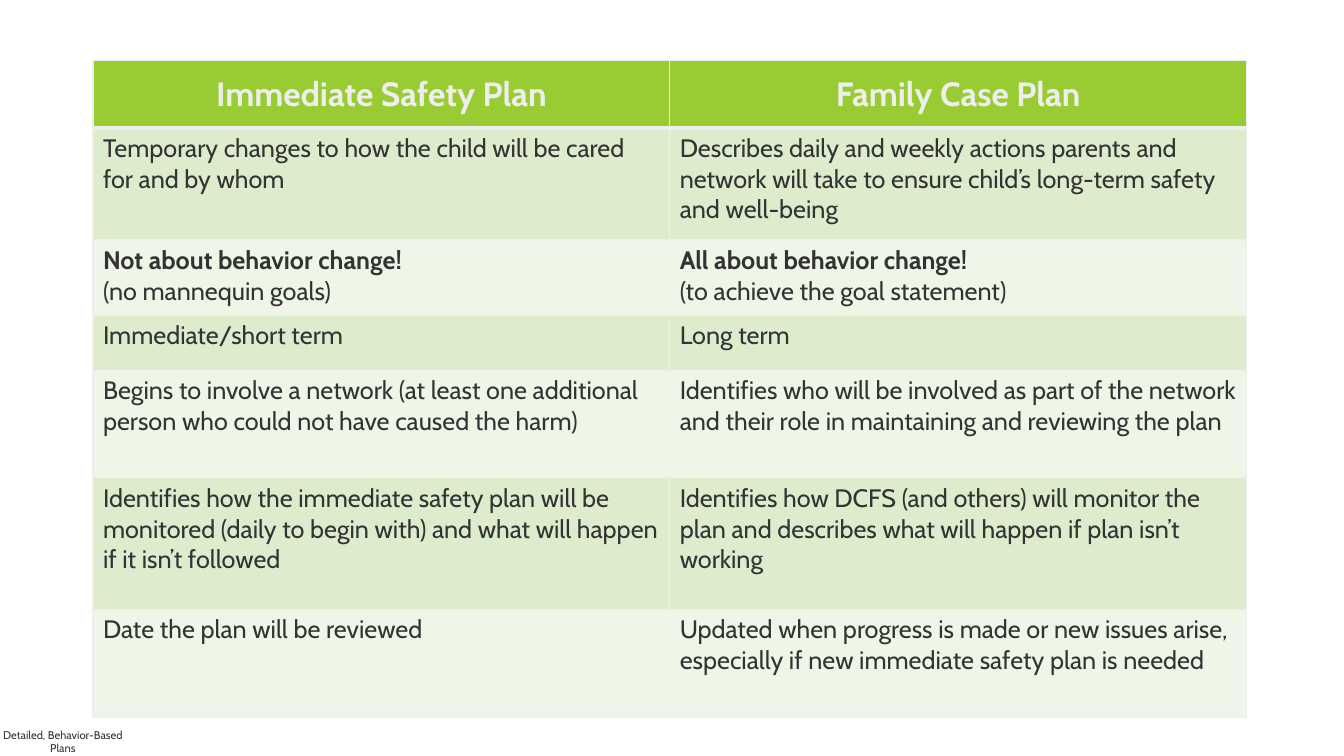
from dataclasses import dataclass

from lxml.etree import SubElement
from pptx import Presentation
from pptx.dml.color import RGBColor
from pptx.enum.text import MSO_ANCHOR, PP_ALIGN
from pptx.oxml.ns import qn
from pptx.util import Pt


@dataclass(frozen=True)
class Theme:
    font: str = "Cabin"
    header_fill: str = "99CC33"
    band_fills: tuple = ("DEECCE", "EFF6E8")
    light: str = "EEEEEE"
    ink: str = "333333"
    header_size: int = 24
    body_size: int = 18
    footer_size: int = 8
    rule: int = 1
    header_rule: int = 3


THEME = Theme()

HEADINGS = ("Immediate Safety Plan", "Family Case Plan")
# A cell given as a pair has a bold statement above a plain remark.
COMPARISONS = [
    ("Temporary changes to how the child will be cared for and by whom",
     "Describes daily and weekly actions parents and network will take to ensure "
     "child’s long-term safety and well-being"),
    (("Not about behavior change!", "(no mannequin goals)"),
     ("All about behavior change!", "(to achieve the goal statement)")),
    ("Immediate/short term", "Long term"),
    ("Begins to involve a network (at least one additional person who could not "
     "have caused the harm)",
     "Identifies who will be involved as part of the network and their role in "
     "maintaining and reviewing the plan"),
    ("Identifies how the immediate safety plan will be monitored (daily to begin "
     "with) and what will happen if it isn’t followed",
     "Identifies how DCFS (and others) will monitor the plan and describes what "
     "will happen if plan isn’t working"),
    ("Date the plan will be reviewed",
     "Updated when progress is made or new issues arise, especially if new "
     "immediate safety plan is needed"),
]
ROW_HEIGHTS = (48, 80, 54, 39, 77, 94, 77)


def style_font(paragraph, size, color, bold=False):
    font = paragraph.font
    font.name = THEME.font
    font.size = Pt(size)
    font.bold = bold
    font.color.rgb = RGBColor.from_string(color)


def set_borders(cell, top, bottom):
    """Rule all four sides; top and bottom are widths in points."""
    properties = cell._tc.get_or_add_tcPr()
    widths = {"L": THEME.rule, "R": THEME.rule, "T": top, "B": bottom}
    for side, width in widths.items():
        border = SubElement(properties, qn(f"a:ln{side}"), w=str(Pt(width)))
        fill = SubElement(border, qn("a:solidFill"))
        SubElement(fill, qn("a:srgbClr"), val=THEME.light)


def paint_cell(cell, color):
    cell.fill.solid()
    cell.fill.fore_color.rgb = RGBColor.from_string(color)


def fill_heading(cell, heading):
    set_borders(cell, THEME.rule, THEME.header_rule)
    paint_cell(cell, THEME.header_fill)
    cell.vertical_anchor = MSO_ANCHOR.MIDDLE
    paragraph = cell.text_frame.paragraphs[0]
    paragraph.text = heading
    paragraph.alignment = PP_ALIGN.CENTER
    style_font(paragraph, THEME.header_size, THEME.light, bold=True)


def fill_comparison(cell, content, row):
    set_borders(cell, THEME.header_rule if row == 1 else THEME.rule, THEME.rule)
    paint_cell(cell, THEME.band_fills[(row - 1) % 2])
    paragraph = cell.text_frame.paragraphs[0]
    if isinstance(content, tuple):
        statement, remark = content
        emphasis = paragraph.add_run()
        emphasis.text = statement
        emphasis.font.bold = True
        paragraph.add_line_break()
        paragraph.add_run().text = remark
    else:
        paragraph.text = content
    style_font(paragraph, THEME.body_size, THEME.ink)


def add_plan_table(slide):
    frame = slide.shapes.add_table(len(ROW_HEIGHTS), len(HEADINGS), Pt(66.4), Pt(43.4),
                                   Pt(824), Pt(sum(ROW_HEIGHTS)))
    table = frame.table
    for row, height in zip(table.rows, ROW_HEIGHTS):
        row.height = Pt(height)
    for column, heading in enumerate(HEADINGS):
        fill_heading(table.cell(0, column), heading)
    for row, contents in enumerate(COMPARISONS, start=1):
        for column, content in enumerate(contents):
            fill_comparison(table.cell(row, column), content, row)


def add_footer(slide, text):
    footer = slide.shapes.add_textbox(Pt(-9), Pt(516.5), Pt(108), Pt(26.5))
    footer.text_frame.word_wrap = True
    paragraph = footer.text_frame.paragraphs[0]
    paragraph.text = text
    paragraph.alignment = PP_ALIGN.CENTER
    style_font(paragraph, THEME.footer_size, THEME.ink)


def main():
    presentation = Presentation()
    presentation.slide_width = Pt(960)
    presentation.slide_height = Pt(540)
    slide = presentation.slides.add_slide(presentation.slide_layouts[6])
    add_plan_table(slide)
    add_footer(slide, "Detailed, Behavior-Based\vPlans")
    presentation.save("out.pptx")


if __name__ == "__main__":
    main()
